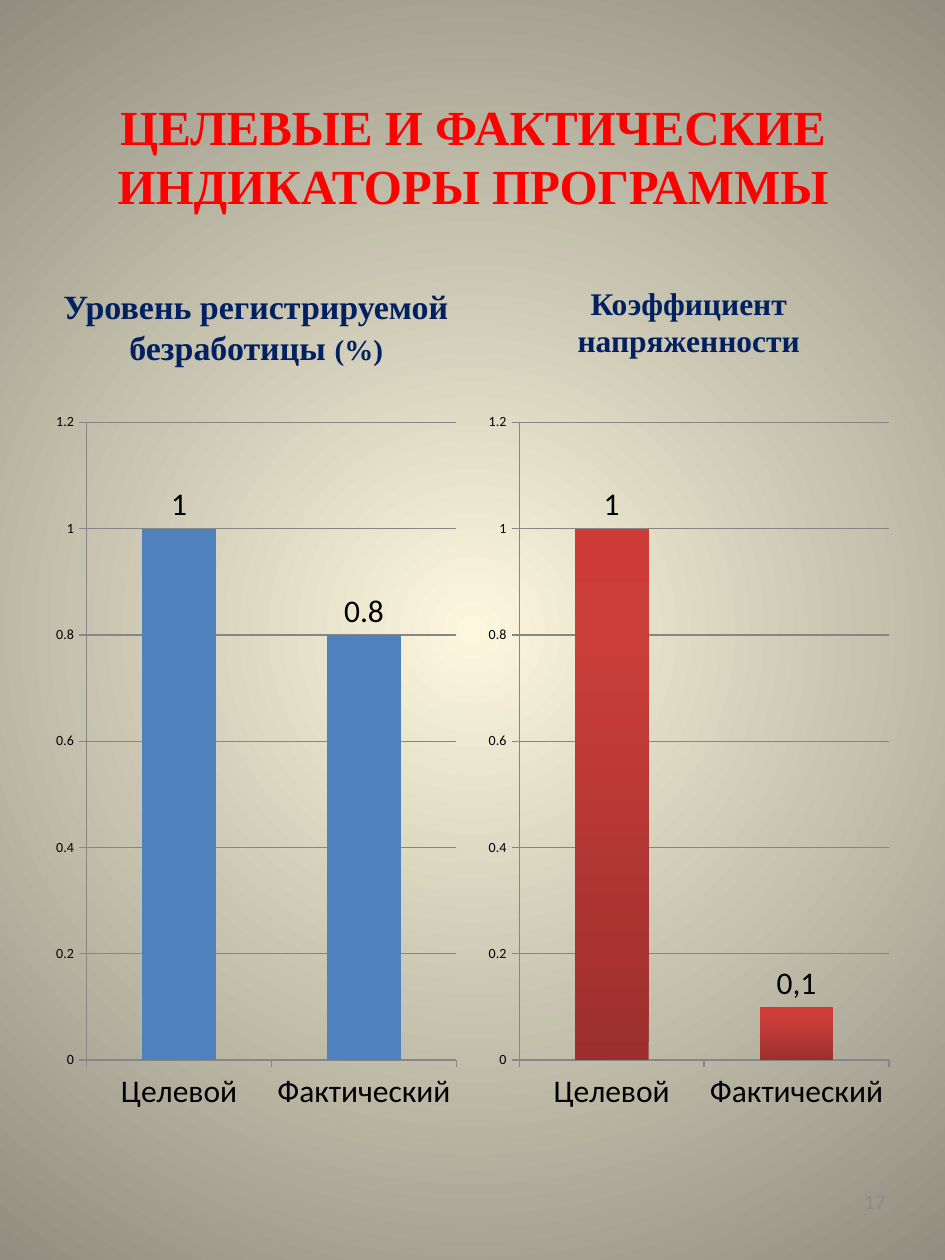
"""Build a slide comparing target and actual programme indicators in two column charts."""
from pptx import Presentation
from pptx import util as u
from pptx.chart.data import CategoryChartData
from pptx.dml.color import RGBColor
from pptx.enum import chart as ch, text
from pptx.oxml import parse_xml
from pptx.oxml.ns import nsdecls, qn

SERIF = "Times New Roman"
SANS = "Calibri"
GREY = "868686"
NAVY = "002060"
BACKDROP = [(0, "FCF7DD"), (100, "918E81")]
RADIAL = '<a:path path="circle"><a:fillToRect l="50000" t="50000" r="50000" b="50000"/></a:path>'
RED_BARS = [(0, "9C2F2D"), (80, "CB3E3A"), (100, "CE3B37")]
UPWARD = '<a:lin ang="16200000" scaled="0"/>'

TITLE = "ЦЕЛЕВЫЕ И ФАКТИЧЕСКИЕ ИНДИКАТОРЫ ПРОГРАММЫ"
PAGE = "17"
CATEGORIES = ["Целевой", "Фактический"]
INDICATORS = [
    dict(heading=[("Уровень регистрируемой безработицы ", 19.4), ("(%)", 16.6)],
         top=4.75, height=3.15, inset=0.5, values=[1, 0.8], stops=None, labels={}),
    dict(heading=[("Коэффициент напряженности", 18)],
         top=5.69, height=1.68, inset=0.13, values=[1, 0.1], stops=RED_BARS, labels={1: "0,1"}),
]
LEFT, COLUMN, STEP = 0.96, 8.41, 8.72
CHART_TOP, CHART_HEIGHT = 8.05, 14.63


def color(value):
    return RGBColor.from_string(value)


def set_gradients(root, stops, direction):
    marks = "".join(f'<a:gs pos="{pos * 1000}"><a:srgbClr val="{tone}"/></a:gs>' for pos, tone in stops)
    for old in list(root.iter(qn("a:gradFill"))):
        new = parse_xml(f'<a:gradFill {nsdecls("a")} rotWithShape="1"><a:gsLst>{marks}</a:gsLst>{direction}</a:gradFill>')
        old.getparent().replace(old, new)


def add_words(slide, place, runs, font, tone, bold, align, anchor, inset=0.13):
    frame = slide.shapes.add_textbox(*map(u.Cm, place)).text_frame
    frame.word_wrap = True
    frame.vertical_anchor = anchor
    frame.margin_bottom = u.Cm(inset)
    paragraph = frame.paragraphs[0]
    paragraph.alignment = align
    for words, size in runs:
        run = paragraph.add_run()
        run.text = words
        run.font.name, run.font.size, run.font.bold = font, u.Pt(size), bold
        run.font.color.rgb = color(tone)


def add_columns(slide, left, indicator):
    data = CategoryChartData()
    data.categories = CATEGORIES
    data.add_series("Series 1", indicator["values"])
    place = map(u.Cm, (left, CHART_TOP, COLUMN, CHART_HEIGHT))
    chart = slide.shapes.add_chart(ch.XL_CHART_TYPE.COLUMN_CLUSTERED, *place, data).chart
    chart.has_legend = chart.has_title = False
    chart.font.name, chart.font.size = SANS, u.Pt(18)
    chart.font.color.rgb = color("000000")

    values = chart.value_axis
    values.minimum_scale, values.maximum_scale, values.major_unit = 0, 1.2, 0.2
    values.tick_labels.font.size = u.Pt(8)
    for axis in (chart.category_axis, values):
        axis.major_tick_mark = ch.XL_TICK_MARK.CROSS if axis is values else ch.XL_TICK_MARK.OUTSIDE
        axis.major_tick_mark = ch.XL_TICK_MARK.OUTSIDE
        axis.format.line.color.rgb = color(GREY)
    values.major_gridlines.format.line.color.rgb = color(GREY)

    plot = chart.plots[0]
    plot.gap_width = 150
    plot.vary_by_categories = False
    series = plot.series[0]
    series.format.fill.solid()
    series.format.fill.fore_color.rgb = color("4F81BD")
    series.data_labels.show_value = True
    series.data_labels.position = ch.XL_LABEL_POSITION.OUTSIDE_END
    if indicator["stops"]:
        for index in range(len(CATEGORIES)):
            series.points[index].format.fill.gradient()
        set_gradients(chart.element if hasattr(chart, "element") else chart._chartSpace,
                      indicator["stops"], UPWARD)
    for index, words in indicator["labels"].items():
        label = series.points[index].data_label
        label.text_frame.text = words
        label.position = ch.XL_LABEL_POSITION.OUTSIDE_END


def main():
    deck = Presentation()
    deck.slide_width, deck.slide_height = u.Cm(19.05), u.Cm(25.4)
    slide = deck.slides.add_slide(deck.slide_layouts[6])
    slide.background.fill.gradient()
    set_gradients(slide.element, BACKDROP, RADIAL)

    align, anchor = text.PP_ALIGN, text.MSO_ANCHOR
    add_words(slide, (LEFT, 1.02, 17.15, 4.24), [(TITLE, 28)], SERIF, "FF0000", True,
              align.CENTER, anchor.MIDDLE)
    for column, indicator in enumerate(INDICATORS):
        left = LEFT + column * STEP
        add_words(slide, (left, indicator["top"], COLUMN, indicator["height"]), indicator["heading"],
                  SERIF, NAVY, True, align.CENTER, anchor.BOTTOM, indicator["inset"])
        add_columns(slide, left, indicator)
    add_words(slide, (13.65, 23.54, 4.45, 1.35), [(PAGE, 12)], SANS, "8B8B8B", False,
              align.RIGHT, anchor.MIDDLE)
    deck.save("out.pptx")


if __name__ == "__main__":
    main()
